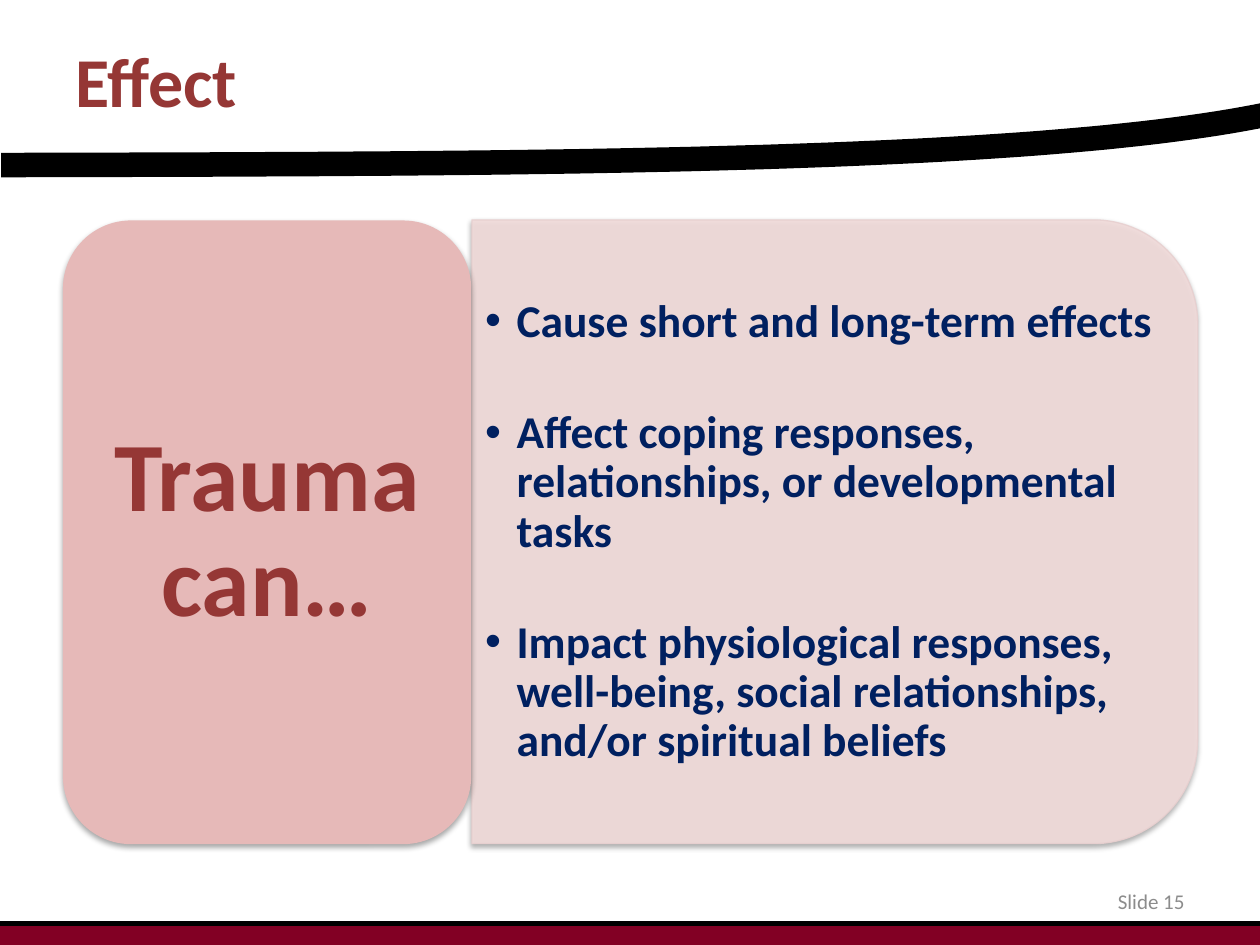
from dataclasses import dataclass

from lxml import etree
from pptx import Presentation
from pptx.dml.color import RGBColor
from pptx.enum import shapes, text
from pptx.oxml import ns
from pptx.util import Inches, Pt

WIDTH, HEIGHT = Inches(10), Inches(7.5)
BRICK, NAVY, GREY, MAROON = "953735", "002060", "8C8C8C", "820024"
ROSE, BLUSH, BLUSH_EDGE = "E6B9B8", "F2DCDB", "E8D0D0"
BLACK, WHITE = "000000", "FFFFFF"
CURVE = ((0.1, 17.47), (42.5, 17.33), (84.8, 17.33), (102.7, 11.47))
CURVE_STEPS = 60
EFFECTS = (
    "Cause short and long-term effects",
    "Affect coping responses, relationships, or developmental tasks",
    "Impact physiological responses, well-being, social relationships, and/or spiritual beliefs",
)


@dataclass(frozen=True)
class Area:
    """A rectangle in percent of the slide's width and height."""
    left: float
    top: float
    width: float
    height: float

    def emu(self) -> tuple:
        """Return left, top, width and height as slide lengths."""
        return (*point(self.left, self.top), *point(self.width, self.height))


@dataclass(frozen=True)
class Style:
    """How the paragraphs of one text look."""
    size: float
    color: str
    bold: bool = True
    align: text.PP_ALIGN = text.PP_ALIGN.LEFT
    line_spacing: float = 1.0
    gap: float = 0
    bullet: bool = False
    insets: tuple = (0.1, 0.05)


def point(x: float, y: float) -> tuple:
    """Turn percent of the slide into lengths."""
    return round(WIDTH * x / 100), round(HEIGHT * y / 100)


def paint(color_format, color: str, alpha: int = 100) -> None:
    """Give a solid fill a hex colour and an opacity in percent."""
    color_format.solid()
    color_format.fore_color.rgb = RGBColor.from_string(color)
    if alpha < 100:
        tint = color_format._xPr.find(f".//{ns.qn('a:srgbClr')}")
        etree.SubElement(tint, ns.qn("a:alpha"), val=str(alpha * 1000))


def add_effects(shape, shadow: bool) -> None:
    """Set a soft shadow below the shape, or none at all."""
    effects = etree.SubElement(shape._element.spPr, ns.qn("a:effectLst"))
    if shadow:
        outer = etree.SubElement(effects, ns.qn("a:outerShdw"), blurRad=str(Pt(3.1)),
                                 dist=str(Pt(1.8)), dir="5400000", rotWithShape="0")
        black = etree.SubElement(outer, ns.qn("a:srgbClr"), val=BLACK)
        etree.SubElement(black, ns.qn("a:alpha"), val="35000")


def write(shape, lines: tuple, style: Style) -> None:
    """Fill a shape with vertically centred paragraphs."""
    frame = shape.text_frame
    frame.word_wrap = True
    frame.vertical_anchor = text.MSO_ANCHOR.MIDDLE
    frame.margin_left = frame.margin_right = Inches(style.insets[0])
    frame.margin_top = frame.margin_bottom = Inches(style.insets[1])
    frame.text = "\n".join(lines)
    for index, paragraph in enumerate(frame.paragraphs):
        paragraph.alignment = style.align
        paragraph.line_spacing = style.line_spacing
        paragraph.space_before = Pt(style.gap if index else 0)
        font = paragraph.runs[0].font
        font.name, font.size, font.bold = "Calibri", Pt(style.size), style.bold
        font.color.rgb = RGBColor.from_string(style.color)
        if style.bullet:
            properties = paragraph._p.get_or_add_pPr()
            properties.set("marL", str(Inches(0.25)))
            properties.set("indent", str(-Inches(0.25)))
            etree.SubElement(properties, ns.qn("a:buFont"), typeface="Arial")
            etree.SubElement(properties, ns.qn("a:buChar"), char="•")


def add_text(slide, area: Area, lines: tuple, style: Style) -> None:
    """Add a text box."""
    write(slide.shapes.add_textbox(*area.emu()), lines, style)


def add_panel(slide, kind: shapes.MSO_SHAPE, area: Area, color: str, alpha: int = 100,
              edge: str = "", shadow: bool = True):
    """Add a filled preset shape."""
    panel = slide.shapes.add_shape(kind, *area.emu())
    paint(panel.fill, color, alpha)
    if edge:
        paint(panel.line.fill, edge, alpha)
        panel.line.width = Pt(0.75)
    else:
        panel.line.fill.background()
    add_effects(panel, shadow)
    return panel


def add_curve(slide) -> None:
    """Draw the sweeping band below the title from a cubic curve."""
    def at(t: float) -> tuple:
        weights = ((1 - t) ** 3, 3 * t * (1 - t) ** 2, 3 * t * t * (1 - t), t ** 3)
        return point(*(sum(w * c for w, c in zip(weights, axis)) for axis in zip(*CURVE)))

    points = [at(step / CURVE_STEPS) for step in range(CURVE_STEPS + 1)]
    builder = slide.shapes.build_freeform(*points[0])
    builder.add_line_segments(points[1:], close=False)
    band = builder.convert_to_shape()
    paint(band.fill, WHITE)
    paint(band.line.fill, BLACK)
    band.line.width = Pt(14)
    add_effects(band, False)


def add_footer(slide) -> None:
    """Draw the maroon strip with its black upper edge."""
    strip = Area(0, 97.73, 100, 2.27)
    add_panel(slide, shapes.MSO_SHAPE.RECTANGLE, strip, MAROON, shadow=False)
    rule = slide.shapes.add_connector(shapes.MSO_CONNECTOR.STRAIGHT,
                                      *point(0, strip.top), *point(100, strip.top))
    paint(rule.line.fill, BLACK)
    rule.line.width = Pt(3)
    add_effects(rule, False)


def main() -> None:
    """Build the slide and save it."""
    deck = Presentation()
    deck.slide_width, deck.slide_height = WIDTH, HEIGHT
    slide = deck.slides.add_slide(deck.slide_layouts[6])
    paint(slide.background.fill, WHITE)

    add_curve(slide)
    add_text(slide, Area(5, 0.13, 90, 16.67), ("Effect",), Style(40, BRICK))
    effects = add_panel(slide, shapes.MSO_SHAPE.ROUND_2_SAME_RECTANGLE,
                        Area(41.5, 17.87, 49.5, 76.8), BLUSH, 90, BLUSH_EDGE)
    effects.rotation = 90
    add_text(slide, Area(37.4, 26.53, 55.2, 59.6), EFFECTS,
             Style(26, NAVY, line_spacing=0.9, gap=35.5, bullet=True, insets=(0.11, 0.05)))
    trauma = add_panel(slide, shapes.MSO_SHAPE.ROUNDED_RECTANGLE,
                       Area(5, 23.33, 32.4, 66), ROSE)
    write(trauma, ("Trauma can…",), Style(56, BRICK, align=text.PP_ALIGN.CENTER,
                                          line_spacing=0.9, insets=(0.23, 0.12)))
    add_footer(slide)
    add_text(slide, Area(71.7, 92.67, 23.3, 5.33), ("Slide 15",),
             Style(12, GREY, bold=False, align=text.PP_ALIGN.RIGHT))
    deck.save("out.pptx")


if __name__ == "__main__":
    main()
